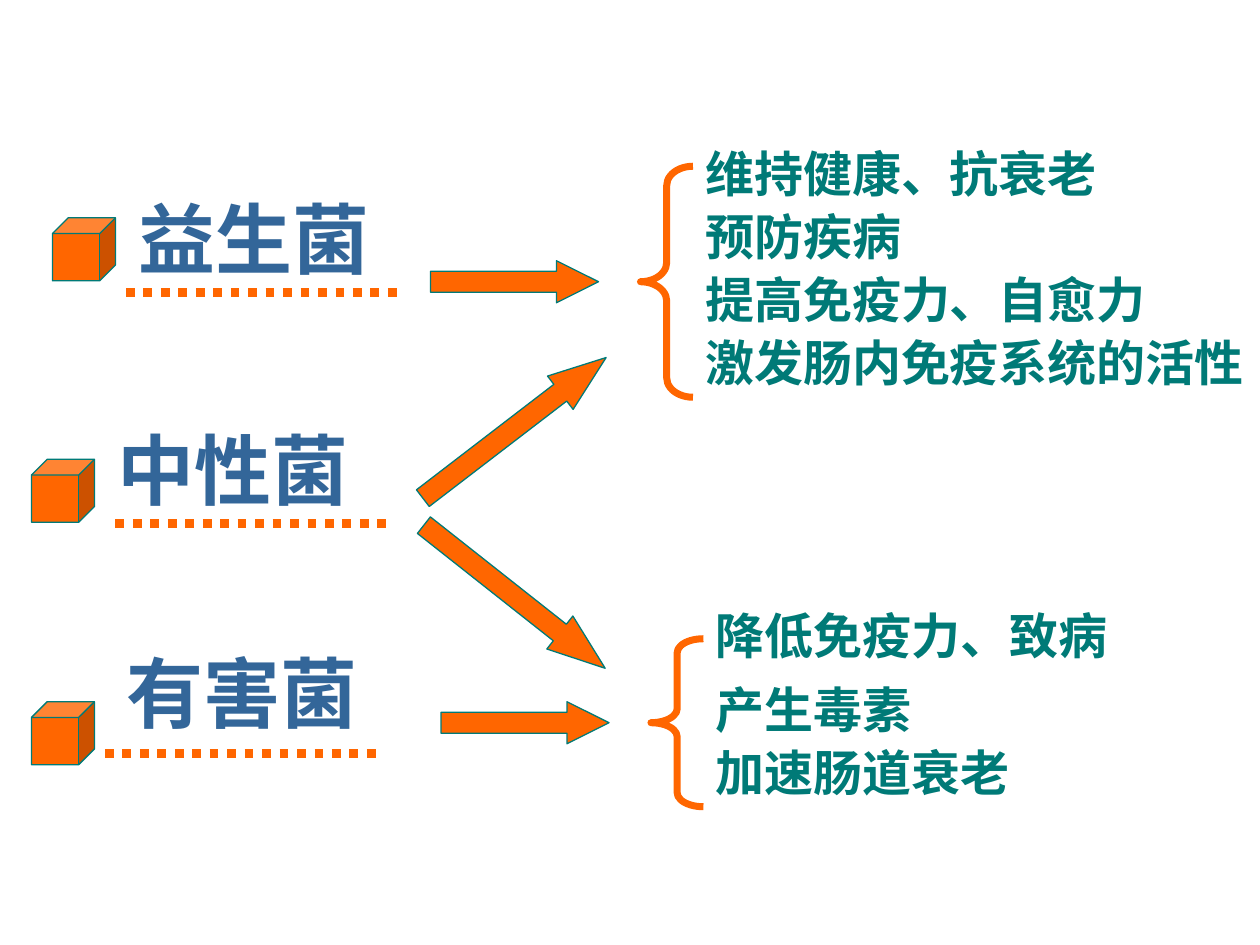
from dataclasses import dataclass

from lxml import etree
from pptx import Presentation
from pptx.dml.color import RGBColor
from pptx.enum.dml import MSO_LINE
from pptx.enum.shapes import MSO_CONNECTOR, MSO_SHAPE
from pptx.enum.text import MSO_ANCHOR
from pptx.oxml.ns import qn
from pptx.util import Pt

CUBE = MSO_SHAPE.CUBE
BRACE = MSO_SHAPE.LEFT_BRACE
ARROW = MSO_SHAPE.RIGHT_ARROW
STRAIGHT = MSO_CONNECTOR.STRAIGHT
DOTTED = MSO_LINE.ROUND_DOT
TOP = MSO_ANCHOR.TOP


@dataclass(frozen=True)
class Theme:
    font: str = "Noto Sans CJK SC"
    orange: RGBColor = RGBColor(0xFF, 0x66, 0x00)
    teal: RGBColor = RGBColor(0x00, 0x7A, 0x77)
    blue: RGBColor = RGBColor(0x33, 0x66, 0x99)
    group_size: float = 44
    effect_size: float = 28
    line_spacing: float = 0.88
    outline: float = 0.75
    brace_line: float = 4
    underline: float = 5


@dataclass(frozen=True)
class Box:
    left: float
    top: float
    width: float
    height: float

    def lengths(self) -> tuple:
        return Pt(self.left), Pt(self.top), Pt(self.width), Pt(self.height)


@dataclass(frozen=True)
class BacteriaGroup:
    name: str
    label_left: float
    label_top: float
    cube_left: float
    cube_top: float
    rule_left: float
    rule_top: float


@dataclass(frozen=True)
class Effect:
    text: str
    box: Box


@dataclass(frozen=True)
class Brace:
    box: Box
    curve: float


@dataclass(frozen=True)
class Arrow:
    box: Box
    head: float
    rotation: float = 0


THEME = Theme()
CUBE_SIDE = 36
RULE_WIDTH = 156
LABEL_WIDTH, LABEL_HEIGHT = 174, 60
EFFECT_HEIGHT = 41

GROUPS = [
    BacteriaGroup("益生菌", 72, 113, 30, 124.5, 72, 167),
    BacteriaGroup("中性菌", 60, 245, 18, 262.5, 66, 299),
    BacteriaGroup("有害菌", 65, 372, 18, 401, 60, 430.5),
]
GOOD_EFFECTS = [
    ("维持健康、抗衰老", 246),
    ("预防疾病", 150),
    ("提高免疫力、自愈力", 282),
    ("激发肠内免疫系统的活性", 324),
]
EFFECTS = [
    Effect(text, Box(396, 83 + 36 * row, width, EFFECT_HEIGHT))
    for row, (text, width) in enumerate(GOOD_EFFECTS)
] + [
    Effect("降低免疫力、致病", Box(402, 347, 240, EFFECT_HEIGHT)),
    Effect("产生毒素", Box(402, 389, 168, EFFECT_HEIGHT)),
    Effect("加速肠道衰老", Box(402, 425, 228, EFFECT_HEIGHT)),
]
BRACES = [
    Brace(Box(366, 95, 30, 132), 0.367),
    Brace(Box(372, 365, 30, 96), 0.267),
]
ARROWS = [
    Arrow(Box(246, 149, 96, 24), 1),
    Arrow(Box(228, 232.5, 132, 24), 1.375, 322.5),
    Arrow(Box(228, 329, 132, 24), 1.375, 38.3),
    Arrow(Box(252, 401, 96, 24), 1),
]


def add_label(slide, text: str, box: Box, size: float, color: RGBColor) -> None:
    frame = slide.shapes.add_textbox(*box.lengths()).text_frame
    frame.word_wrap = True
    frame.vertical_anchor = TOP
    frame.text = text
    paragraph = frame.paragraphs[0]
    paragraph.line_spacing = THEME.line_spacing
    run = paragraph.runs[0]
    run.font.name = THEME.font
    run.font.size = Pt(size)
    run.font.bold = True
    run.font.color.rgb = color
    east_asian = etree.Element(qn("a:ea"), typeface=THEME.font)
    run.font._element.find(qn("a:latin")).addnext(east_asian)


def add_solid(slide, kind: MSO_SHAPE, box: Box):
    """Add an orange shape with a thin teal outline."""
    solid = slide.shapes.add_shape(kind, *box.lengths())
    solid.shadow.inherit = False
    solid.fill.solid()
    solid.fill.fore_color.rgb = THEME.orange
    solid.line.color.rgb = THEME.teal
    solid.line.width = Pt(THEME.outline)
    return solid


def add_dotted_rule(slide, left: float, top: float) -> None:
    rule = slide.shapes.add_connector(
        STRAIGHT, Pt(left), Pt(top), Pt(left + RULE_WIDTH), Pt(top)
    )
    rule.line.color.rgb = THEME.orange
    rule.line.width = Pt(THEME.underline)
    rule.line.dash_style = DOTTED
    etree.SubElement(rule._element.spPr, qn("a:effectLst"))


def add_group(slide, group: BacteriaGroup) -> None:
    add_solid(slide, CUBE, Box(group.cube_left, group.cube_top, CUBE_SIDE, CUBE_SIDE))
    add_dotted_rule(slide, group.rule_left, group.rule_top)
    label_box = Box(group.label_left, group.label_top, LABEL_WIDTH, LABEL_HEIGHT)
    add_label(slide, group.name, label_box, THEME.group_size, THEME.blue)


def add_brace(slide, brace: Brace) -> None:
    bracket = slide.shapes.add_shape(BRACE, *brace.box.lengths())
    bracket.shadow.inherit = False
    bracket.adjustments[0] = brace.curve
    bracket.fill.background()
    bracket.line.color.rgb = THEME.orange
    bracket.line.width = Pt(THEME.brace_line)


def add_arrow(slide, arrow: Arrow) -> None:
    pointer = add_solid(slide, ARROW, arrow.box)
    pointer.adjustments[1] = arrow.head
    pointer.rotation = arrow.rotation


def main() -> None:
    deck = Presentation()
    deck.slide_width, deck.slide_height = Pt(720), Pt(540)
    slide = deck.slides.add_slide(deck.slide_layouts.get_by_name("Blank"))
    for group in GROUPS:
        add_group(slide, group)
    for effect in EFFECTS:
        add_label(slide, effect.text, effect.box, THEME.effect_size, THEME.teal)
    for brace in BRACES:
        add_brace(slide, brace)
    for arrow in ARROWS:
        add_arrow(slide, arrow)
    deck.save("out.pptx")


if __name__ == "__main__":
    main()
